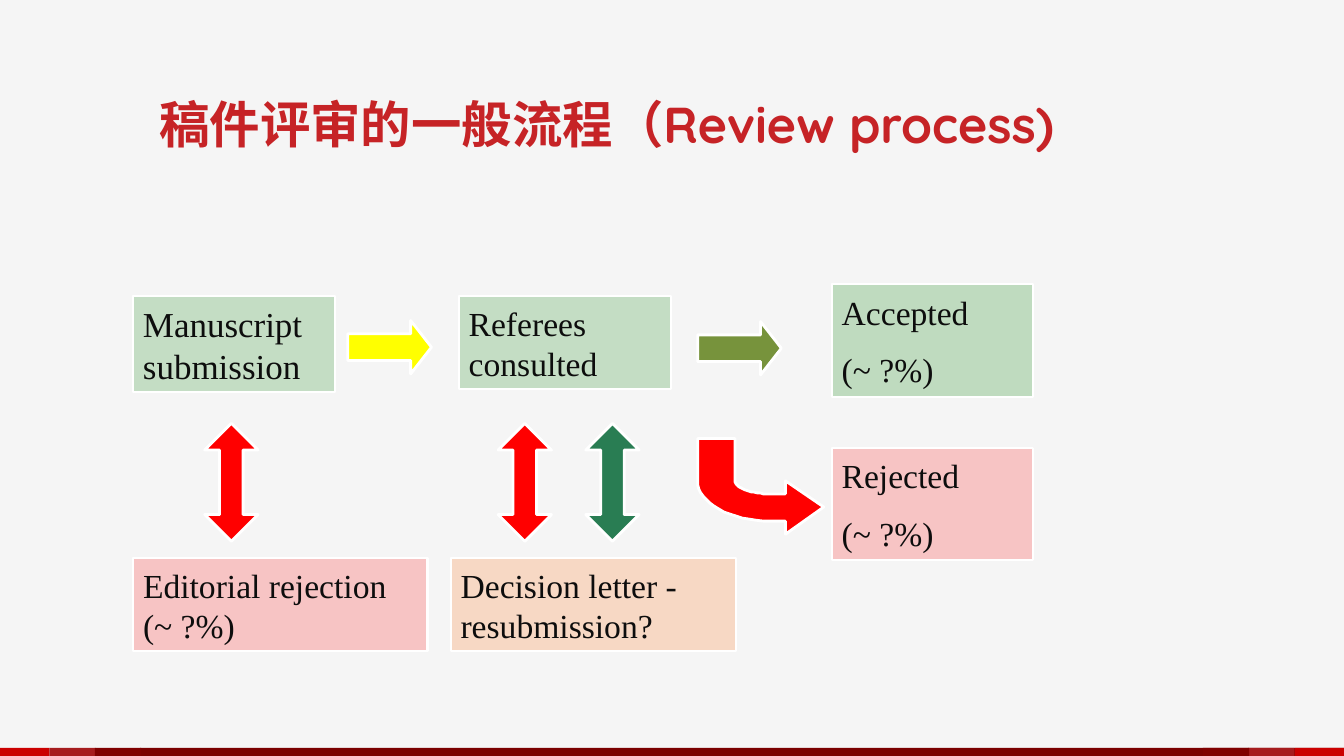
import pptx
import pptx.dml.color
import pptx.enum.shapes
import pptx.enum.text
import pptx.oxml
import pptx.oxml.ns
import pptx.util

EMU_PER_PX = 9144
COLORS = {
    "background": "F5F5F5", "title": "C62326", "text": "0D0D0D", "outline": "FFFFFF",
    "green": "008000", "orange": "FF6600", "red": "FF0000", "yellow": "FFFF00",
    "olive": "77933C", "teal": "297D53",
    "bar": "7B0000", "bar_bright": "CB0000", "bar_mid": "A61C1E", "bar_dark": "800000",
}
SHAPES = pptx.enum.shapes.MSO_SHAPE


def px(length):
    """Turn whole px into EMU."""
    return pptx.util.Emu(length * EMU_PER_PX)


def rgb(name):
    """Look up a colour by name."""
    return pptx.dml.color.RGBColor.from_string(COLORS[name])


def paint(shape, color, outline_pt=0, opacity=100):
    """Give a shape its fill, outline and opacity, without a shadow."""
    shape.shadow.inherit = False
    shape.fill.solid()
    shape.fill.fore_color.rgb = rgb(color)
    if opacity < 100:
        tint = shape.fill._xPr.find(".//" + pptx.oxml.ns.qn("a:srgbClr"))
        alpha = pptx.oxml.parse_xml(f'<a:alpha {pptx.oxml.ns.nsdecls("a")} val="{opacity * 1000}"/>')
        tint.append(alpha)
    if outline_pt:
        shape.line.color.rgb = rgb("outline")
        shape.line.width = pptx.util.Pt(outline_pt)
    else:
        shape.line.fill.background()


def add_preset(slide, preset, bounds):
    """Place a preset shape at left, top, width, height."""
    return slide.shapes.add_shape(preset, *map(px, bounds))


def add_title(slide, text):
    """Fill and format the title placeholder."""
    title = slide.shapes.title
    title.left, title.top, title.width, title.height = map(px, (148, 94, 1040, 90))
    frame = title.text_frame
    frame.text = text
    frame.word_wrap = True
    frame.auto_size = pptx.enum.text.MSO_AUTO_SIZE.NONE
    frame.vertical_anchor = pptx.enum.text.MSO_ANCHOR.TOP
    heading = frame.paragraphs[0]
    heading.alignment = pptx.enum.text.PP_ALIGN.LEFT
    heading.line_spacing = 0.9
    heading.font.name = "Quicksand"
    heading.font.size = pptx.util.Pt(36)
    heading.font.bold = True
    heading.font.color.rgb = rgb("title")


def add_footer_bar(slide):
    """Draw the footer bar with mirrored end pieces."""
    pieces = [(139, 1194, "bar")]
    for left, width, color in ((0, 49, "bar_bright"), (49, 46, "bar_mid"), (94, 46, "bar_dark")):
        pieces += [(left, width, color), (1333 - left - width, width, color)]
    for left, width, color in pieces:
        paint(add_preset(slide, SHAPES.RECTANGLE, (left, 742, width, 8)), color)


def add_stage(slide, bounds, color, lines, size=24, opacity=20):
    """Add a tinted box that names one stage of the review."""
    stage = add_preset(slide, SHAPES.RECTANGLE, bounds)
    paint(stage, color, 1.5, opacity)
    frame = stage.text_frame
    frame.word_wrap = True
    frame.auto_size = pptx.enum.text.MSO_AUTO_SIZE.SHAPE_TO_FIT_TEXT
    frame.vertical_anchor = pptx.enum.text.MSO_ANCHOR.MIDDLE
    frame.text = "\n".join(lines)
    for index, paragraph in enumerate(frame.paragraphs):
        paragraph.alignment = pptx.enum.text.PP_ALIGN.LEFT
        if index:
            paragraph.space_before = pptx.util.Pt(size / 2)
        paragraph.font.name = "Times New Roman"
        paragraph.font.size = pptx.util.Pt(size)
        paragraph.font.color.rgb = rgb("text")


def add_arrow(slide, preset, bounds, color, head):
    """Add a block arrow with the given head length ratio."""
    arrow = add_preset(slide, preset, bounds)
    arrow.adjustments[0] = 0.5
    arrow.adjustments[1] = head
    paint(arrow, color, 2)


def curve(start, control_a, control_b, end, steps=16):
    """Sample points along a cubic curve, leaving out its start."""
    points = []
    for step in range(1, steps + 1):
        t = step / steps
        weights = ((1 - t) ** 3, 3 * t * (1 - t) ** 2, 3 * t * t * (1 - t), t ** 3)
        corners = (start, control_a, control_b, end)
        points.append(tuple(sum(w * c[axis] for w, c in zip(weights, corners)) for axis in (0, 1)))
    return points


def add_bent_arrow(slide):
    """Draw the curved arrow that leads to rejection."""
    outer = curve((764, 517), (724, 517), (692, 499), (692, 477))
    inner = curve((729, 477), (729, 484), (745, 490), (764, 490))
    outline = [(779, 530), (779, 517), (764, 517), *outer, (692, 435), (729, 435), (729, 477),
               *inner, (779, 490), (779, 477)]
    builder = slide.shapes.build_freeform(817, 503, scale=EMU_PER_PX)
    builder.add_line_segments(outline, close=True)
    paint(builder.convert_to_shape(), "red", 2)


def main():
    """Build the review process slide and save it."""
    deck = pptx.Presentation()
    deck.slide_width, deck.slide_height = px(1333), px(750)
    slide = deck.slides.add_slide(deck.slide_layouts[5])
    slide.background.fill.solid()
    slide.background.fill.fore_color.rgb = rgb("background")

    add_footer_bar(slide)
    add_title(slide, "稿件评审的一般流程（Review process)")

    add_stage(slide, (132, 294, 200, 95), "green", ["Manuscript submission"], size=25)
    add_stage(slide, (455, 294, 211, 92), "green", ["Referees consulted"])
    add_stage(slide, (447, 554, 283, 92), "orange", ["Decision letter - resubmission?"])
    add_stage(slide, (825, 282, 200, 112), "green", ["Accepted", "(~ ?%)"], opacity=22)
    add_stage(slide, (132, 554, 292, 92), "red", ["Editorial rejection (~ ?%)"])
    add_stage(slide, (825, 444, 200, 112), "red", ["Rejected", "(~ ?%)"])

    for left, top, color in ((345, 318, "yellow"), (692, 319, "olive")):
        add_arrow(slide, SHAPES.RIGHT_ARROW, (left, top, 83, 53), color, 0.39)
    for left, color in ((203, "red"), (494, "red"), (581, "teal")):
        add_arrow(slide, SHAPES.UP_DOWN_ARROW, (left, 420, 53, 117), color, 0.44)
    add_bent_arrow(slide)


    deck.save("out.pptx")


if __name__ == "__main__":
    main()
